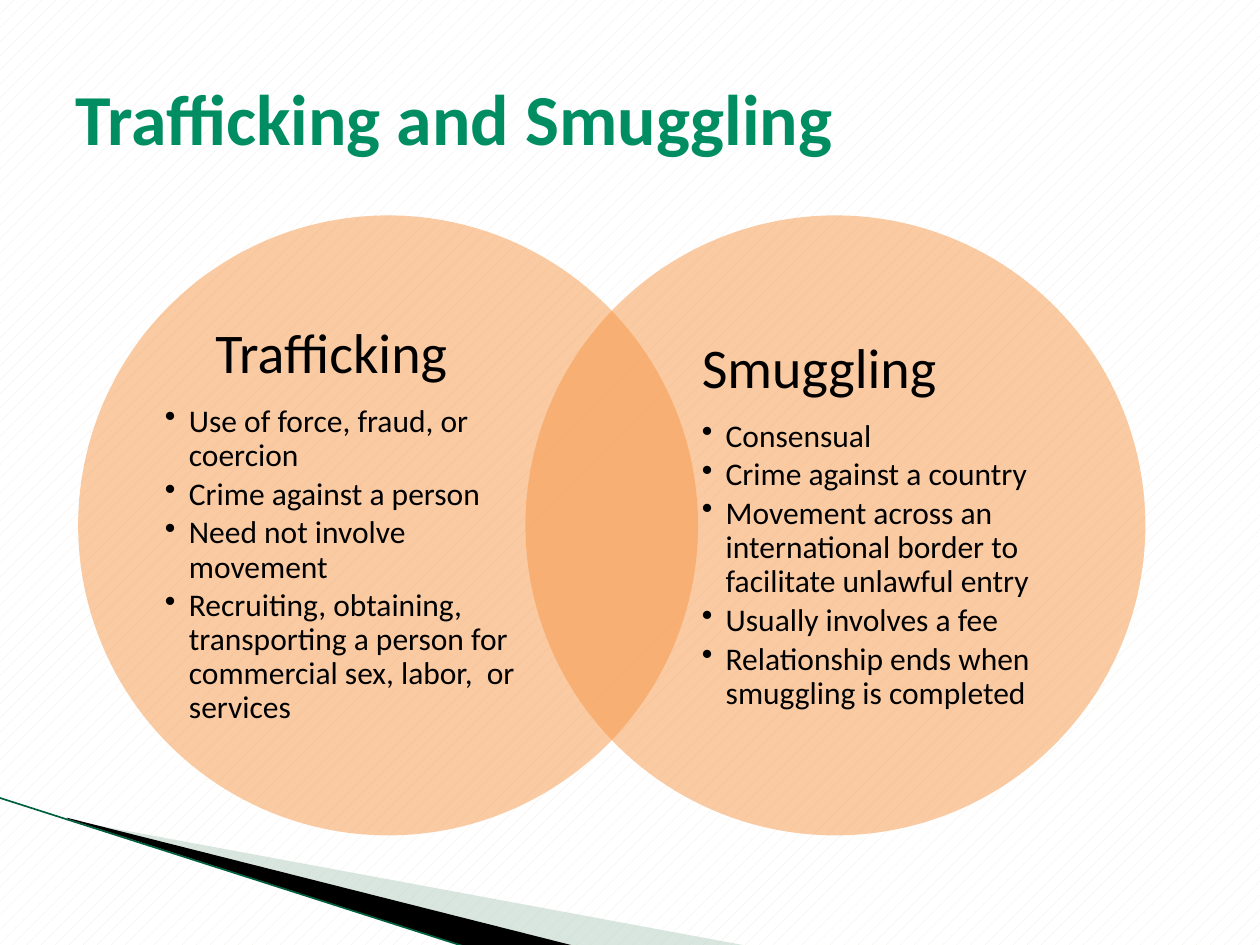
from lxml import etree
from pptx import Presentation
from pptx.dml.color import RGBColor
from pptx.enum.dml import MSO_PATTERN
from pptx.enum.shapes import MSO_CONNECTOR, MSO_SHAPE
from pptx.enum.text import MSO_ANCHOR
from pptx.oxml.ns import qn
from pptx.util import Inches, Pt

DOTS = MSO_PATTERN.PERCENT_10
LINE = MSO_CONNECTOR.STRAIGHT
OVAL = MSO_SHAPE.OVAL
MIDDLE = MSO_ANCHOR.MIDDLE


def paint(shape, color, alpha=100):
    """Fill a shape without outline or shadow; alpha is opacity in percent."""
    shape.shadow.inherit = False
    shape.line.fill.background()
    shape.fill.solid()
    shape.fill.fore_color.rgb = RGBColor.from_string(color)
    if alpha < 100:
        tone = shape.fill._xPr.find(".//" + qn("a:srgbClr"))
        etree.SubElement(tone, qn("a:alpha"), val=str(alpha * 1000))


def write(para, text, size, color="000000", bold=False):
    run = para.add_run()
    run.text = text
    run.font.name = "Calibri"
    run.font.size = Pt(size)
    run.font.bold = bold
    run.font.color.rgb = RGBColor.from_string(color)


deck = Presentation()
deck.slide_width, deck.slide_height = Inches(10), Inches(7.5)
slide = deck.slides.add_slide(deck.slide_layouts[6])
shapes = slide.shapes

back = slide.background.fill
back.patterned()
back.pattern = DOTS
back.fore_color.rgb = RGBColor.from_string("EEECE1")
back.back_color.rgb = RGBColor.from_string("FFFFFF")

# Corner wedges, in hundredths of an inch
wedges = [
    ([(55, 651), (595, 751), (456, 751), (55, 650)], "9FC2AF", 40),
    ([(53, 649), (457, 751), (372, 752), (54, 650)], "000000", 100),
]
for points, color, alpha in wedges:
    pen = shapes.build_freeform(*points[0], scale=Inches(0.01))
    pen.add_line_segments(points[1:])
    paint(pen.convert_to_shape(), color, alpha)

edge = shapes.add_connector(
    LINE, Inches(-0.01), Inches(6.33), Inches(3.71), Inches(7.52))
edge.line.width = Pt(0.95)
edge.line.color.rgb = RGBColor.from_string("005F41")
etree.SubElement(edge._element.spPr, qn("a:effectLst"))

# Circle left, text left, heading indent, heading, bullets
sides = [
    (0.62, 1.31, 0.4, "Trafficking", [
        "Use of force, fraud, or coercion",
        "Crime against a person",
        "Need not involve movement",
        "Recruiting, obtaining, transporting a person for "
        "commercial sex, labor,  or services",
    ]),
    (4.17, 5.57, 0, "Smuggling", [
        "Consensual",
        "Crime against a country",
        "Movement across an international border to facilitate unlawful entry",
        "Usually involves a fee",
        "Relationship ends when smuggling is completed",
    ]),
]
for left, inner, indent, head, items in sides:
    disc = shapes.add_shape(
        OVAL, Inches(left), Inches(1.71), Inches(4.92), Inches(4.92))
    paint(disc, "F79646", 50)

    box = shapes.add_textbox(
        Inches(inner), Inches(2.29), Inches(2.84), Inches(3.76))
    frame = box.text_frame
    frame.word_wrap = True
    frame.vertical_anchor = MIDDLE
    frame.margin_left = frame.margin_right = 0
    frame.margin_top = frame.margin_bottom = 0

    para = frame.paragraphs[0]
    para.line_spacing = 0.9
    para.space_after = Pt(11.2)
    para._p.get_or_add_pPr().set("marL", str(Inches(indent)))
    write(para, head, 32)
    for item in items:
        para = frame.add_paragraph()
        para.level = 1
        para.line_spacing = 0.9
        para.space_after = Pt(2.7)
        props = para._p.get_or_add_pPr()
        props.set("marL", str(Inches(0.19)))
        props.set("indent", str(Inches(-0.19)))
        etree.SubElement(props, qn("a:buChar"), char="•")
        write(para, item, 18)

title = shapes.add_textbox(Inches(0.5), Inches(0.3), Inches(9), Inches(1.25))
title.text_frame.word_wrap = True
title.text_frame.vertical_anchor = MIDDLE
write(title.text_frame.paragraphs[0], "Trafficking and Smuggling",
      41, "008D61", True)

deck.save("out.pptx")
